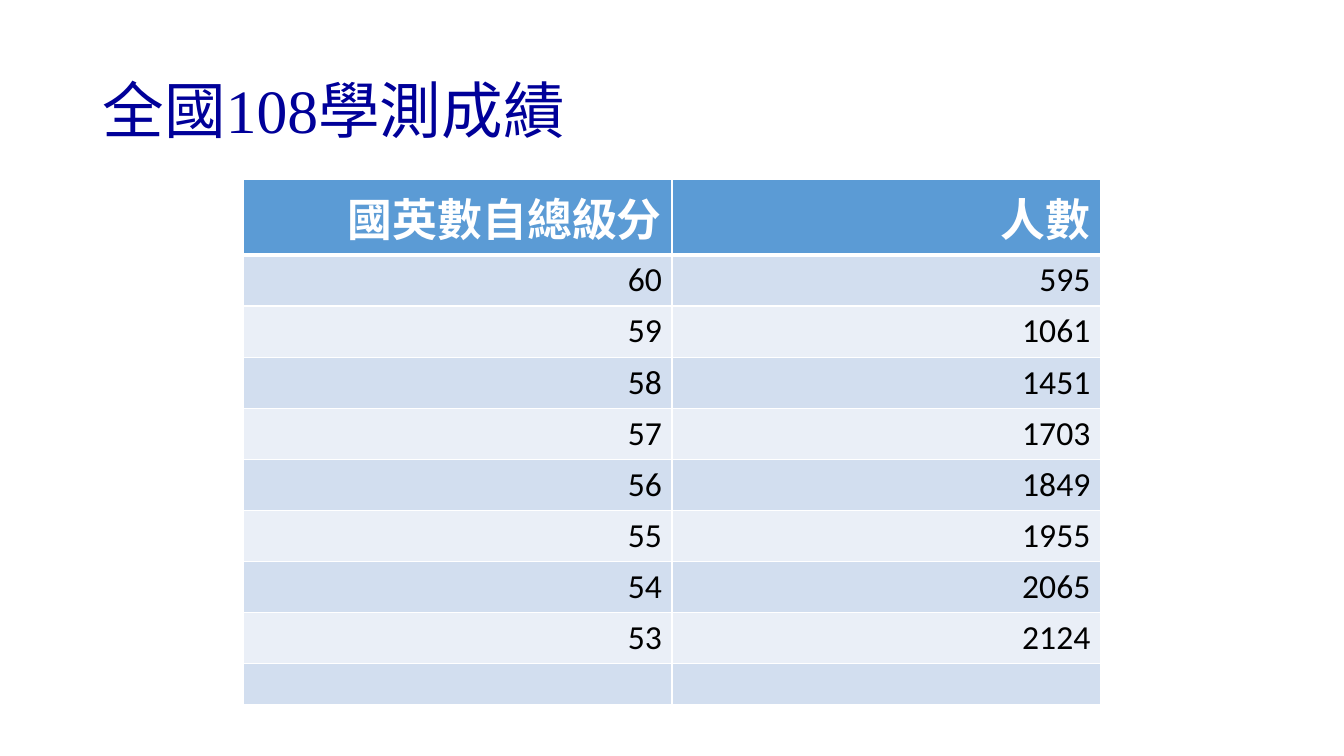
from dataclasses import dataclass

from lxml import etree
from pptx import Presentation
from pptx.dml.color import RGBColor
from pptx.enum.text import MSO_ANCHOR, PP_ALIGN
from pptx.oxml.ns import qn
from pptx.util import Pt

RIGHT = PP_ALIGN.RIGHT
LEFT = PP_ALIGN.LEFT
MIDDLE = MSO_ANCHOR.MIDDLE
TITLE_ONLY = 5

COLORS = {
    "title": "000099",
    "header": "5B9BD5",
    "band_dark": "D2DEEF",
    "band_light": "EAEFF7",
    "white": "FFFFFF",
    "black": "000000",
}
TITLE_FONT = {"name": "Times New Roman", "size": Pt(44)}
HEADER_FONT = {"name": "Calibri", "size": Pt(32), "bold": True}
BODY_FONT = {"name": "Calibri", "size": Pt(24), "bold": False}
TITLE_BOX = {"left": Pt(66), "top": Pt(28.8), "width": Pt(828), "height": Pt(104.4)}


@dataclass
class TableRow:
    texts: tuple[str, str]
    height: float
    fill: str
    color: str
    font: dict
    top_line: float = 1
    bottom_line: float = 1


SCORES = [
    (60, 595), (59, 1061), (58, 1451), (57, 1703),
    (56, 1849), (55, 1955), (54, 2065), (53, 2124),
]


def set_attrs(obj, values: dict) -> None:
    for name, value in values.items():
        setattr(obj, name, value)


def rgb(name: str) -> RGBColor:
    return RGBColor.from_string(COLORS[name])


def add_border(cell, side: str, width: float) -> None:
    ln = etree.SubElement(cell._tc.get_or_add_tcPr(), qn(f"a:ln{side}"), w=str(Pt(width)))
    fill = etree.SubElement(ln, qn("a:solidFill"))
    etree.SubElement(fill, qn("a:srgbClr"), val=COLORS["white"])


def write_text(tf, text: str, font: dict, color: str, align) -> None:
    p = tf.paragraphs[0]
    p.alignment = align
    r = p.add_run()
    r.text = text
    set_attrs(r.font, font)
    r.font.color.rgb = rgb(color)


def fill_cell(cell, text: str, row: TableRow) -> None:
    widths = {"L": 1, "R": 1, "T": row.top_line, "B": row.bottom_line}
    for side, width in widths.items():
        add_border(cell, side, width)
    cell.fill.solid()
    cell.fill.fore_color.rgb = rgb(row.fill)
    if text:
        write_text(cell.text_frame, text, row.font, row.color, RIGHT)


def build_rows() -> list[TableRow]:
    rows = [TableRow(("國英數自總級分", "人數"), 45.5, "header", "white", HEADER_FONT, bottom_line=3)]
    bands = ("band_dark", "band_light")
    for i, (score, count) in enumerate(SCORES):
        rows.append(TableRow((str(score), str(count)), 36, bands[i % 2], "black", BODY_FONT))
    rows.append(TableRow(("", ""), 29.2, bands[len(SCORES) % 2], "black", BODY_FONT))
    rows[1].top_line = 3
    return rows


def add_score_table(slide, rows: list[TableRow]) -> None:
    height = sum(row.height for row in rows)
    table = slide.shapes.add_table(len(rows), 2, Pt(174), Pt(128.4), Pt(612), Pt(height)).table
    for i, row in enumerate(rows):
        table.rows[i].height = Pt(row.height)
        for j, text in enumerate(row.texts):
            fill_cell(table.cell(i, j), text, row)


def main() -> None:
    prs = Presentation()
    prs.slide_width, prs.slide_height = Pt(960), Pt(540)
    slide = prs.slides.add_slide(prs.slide_layouts[TITLE_ONLY])
    title = slide.shapes.title
    set_attrs(title, TITLE_BOX)
    tf = title.text_frame
    tf.vertical_anchor = MIDDLE
    write_text(tf, "全國108學測成績", TITLE_FONT, "title", LEFT)
    tf.paragraphs[0].line_spacing = 0.9
    add_score_table(slide, build_rows())
    prs.save("out.pptx")


if __name__ == "__main__":
    main()
